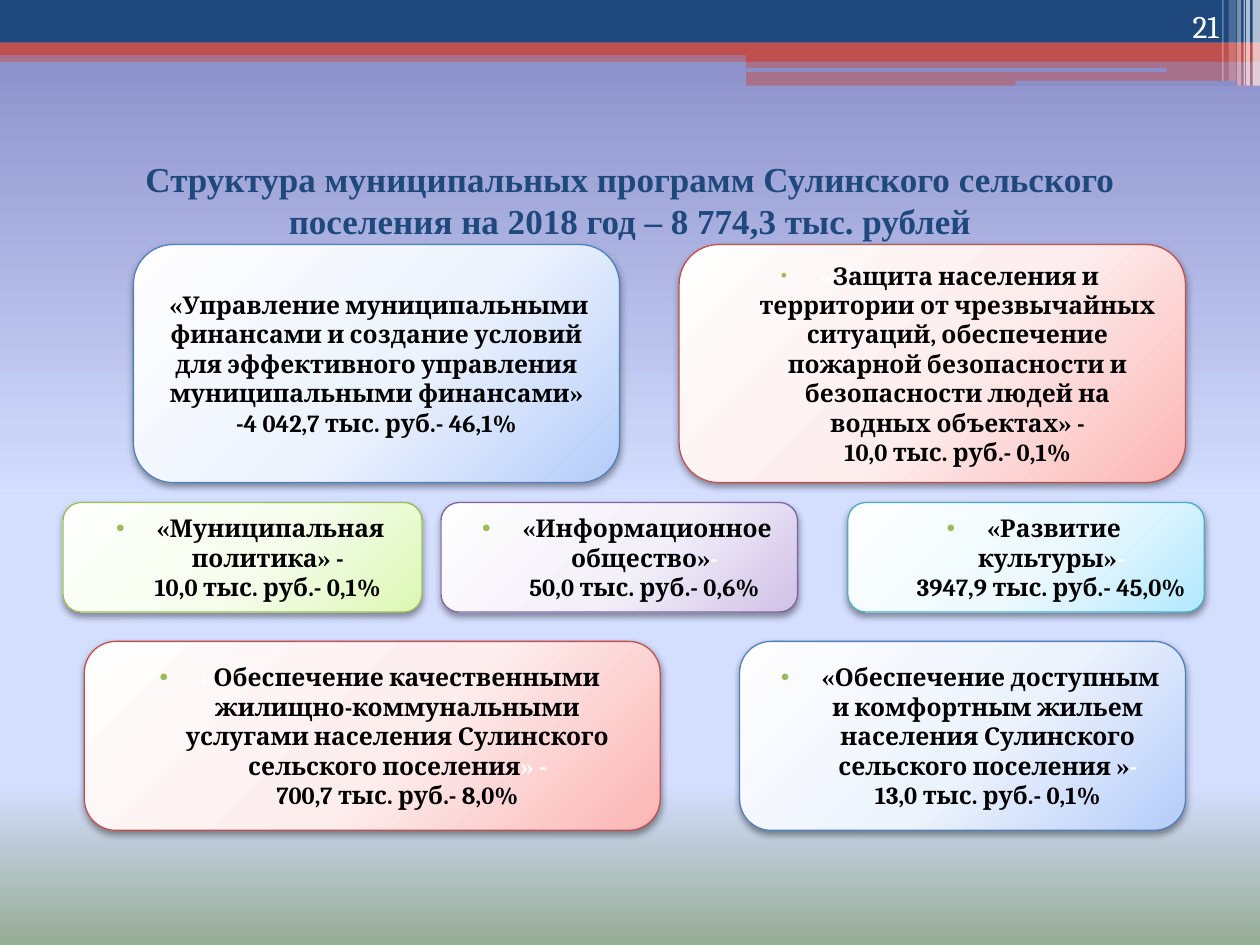
from pptx import Presentation
from pptx import oxml
from pptx.dml.color import RGBColor
from pptx.enum import shapes, text
from pptx.oxml import ns
from pptx.util import Cm, Pt

INK = {
    "navy": "1F497D", "red": "C0504D", "white": "FFFFFF", "black": "000000",
    "sky": "8B8FC8", "dot": "9BBB59",
}
SKY = [(0, "8488C4"), (53, "D4DEFF"), (83, "D4DEFF"), (100, "96AB94")]
# Line colour, then the three gradient colours
TONE = {
    "blue": ("4F81BD", "FEFEFF", "EDF3FD", "B5CCF9"),
    "red": ("C0504D", "FFFEFE", "FDEDED", "FBB5B4"),
    "green": ("9BBB59", "FEFFFE", "F6FDEC", "DCF7B4"),
    "violet": ("8064A2", "FEFEFE", "F3F0F9", "D0C1E7"),
    "aqua": ("4BACC6", "FEFFFF", "EDF9FE", "B2E8FF"),
}
LINEAR = '<a:lin ang="5400000" scaled="0"/>'
ROUND = ('<a:path path="circle"><a:fillToRect l="-40000" t="-90000" '
         'r="140000" b="190000"/></a:path>')


def node(xml):
    """Parse one DrawingML element, given without its namespace."""
    tag, rest = xml.split(" ", 1)
    return oxml.parse_xml(f'{tag} {ns.nsdecls("a")} {rest}')


def blend(owner, fill, stops, way):
    """Give the owner element a gradient in place of its plain fill."""
    fill.background()
    old = next(owner.iter(ns.qn("a:noFill")))
    marks = "".join(f'<a:gs pos="{pos * 1000}"><a:srgbClr val="{hue}"/></a:gs>'
                    for pos, hue in stops)
    new = node(f'<a:gradFill rotWithShape="1"><a:gsLst>{marks}</a:gsLst>{way}</a:gradFill>')
    old.getparent().replace(old, new)


deck = Presentation()
deck.slide_width, deck.slide_height = Cm(25.4), Cm(19.05)
slide = deck.slides.add_slide(deck.slide_layouts[4])
blend(slide.element, slide.background.fill, SKY, LINEAR)
title, body = slide.shapes.title, slide.placeholders[1]
for spare in list(slide.placeholders):
    if spare.placeholder_format.idx > 1:
        spare.element.getparent().remove(spare.element)

# Header bands and stripes: left, top, width, height, colour, opacity
RECT, SOFT = shapes.MSO_SHAPE.RECTANGLE, shapes.MSO_SHAPE.ROUNDED_RECTANGLE
bands = [
    (RECT, 0, 1.02, 25.4, 0.23, "red", 50),
    (RECT, 0, 0, 25.4, 0.86, "navy", 100),
    (RECT, 0, 0.86, 25.4, 0.25, "red", 100),
    (RECT, 15.04, 0.99, 10.36, 0.25, "red", 100),
    (RECT, 15.04, 1.22, 10.36, 0.51, "red", 50),
    (SOFT, 15.01, 1.37, 8.51, 0.08, "sky", 100),
    (SOFT, 20.47, 1.63, 4.45, 0.1, "sky", 100),
]
for left, wide, high, clear in [
    (25.25, 0.15, 1.73, 65), (25.12, 0.08, 1.73, 65), (25.07, 0.03, 1.73, 60),
    (24.94, 0.08, 1.73, 40), (24.77, 0.15, 1.63, 20), (24.64, 0.03, 1.63, 30),
]:
    bands.append((RECT, left, 0, wide, high, "white", clear))
for kind, left, top, wide, high, ink, clear in bands:
    band = slide.shapes.add_shape(kind, Cm(left), Cm(top), Cm(wide), Cm(high))
    band.shadow.inherit = False
    band.line.fill.background()
    band.fill.solid()
    band.fill.fore_color.rgb = RGBColor.from_string(INK[ink])
    if clear < 100:
        hue = next(band.element.spPr.iter(ns.qn("a:srgbClr")))
        hue.append(node(f'<a:alpha val="{clear * 1000}"/>'))

# Title
title.left, title.top, title.width, title.height = Cm(1.27), Cm(3.18), Cm(22.86), Cm(2.97)
frame = title.text_frame
frame.auto_size = text.MSO_AUTO_SIZE.NONE
frame.vertical_anchor = text.MSO_ANCHOR.TOP
frame.margin_top = 0
para = frame.paragraphs[0]
para.alignment = text.PP_ALIGN.CENTER
run = para.add_run()
run.text = "Структура муниципальных программ Сулинского сельского поселения на 2018 год – 8 774,3 тыс. рублей"
run.font.name, run.font.size, run.font.bold = "Times New Roman", Pt(20), True
run.font.color.rgb = RGBColor.from_string(INK["navy"])

# Page number
page = slide.shapes.add_textbox(Cm(22.71), 0, Cm(2.11), Cm(1.02))
page.text_frame.word_wrap = True
page.text_frame.vertical_anchor = text.MSO_ANCHOR.BOTTOM
para = page.text_frame.paragraphs[0]
para.alignment = text.PP_ALIGN.RIGHT
run = para.add_run()
run.text = "21"
run.font.name, run.font.size = "Cambria", Pt(18)
run.font.color.rgb = RGBColor.from_string(INK["white"])

# Programme cards: tone, left, top, width, height, runs (None is a line break)
B, W = "black", "white"
cards = [
    ("blue", 2.69, 4.93, 9.8, 4.8, [
        (" «Управление муниципальными финансами и создание условий для эффективного "
         "управления муниципальными финансами» -4 042,7 тыс. руб.- 46,1%", B, 14)]),
    ("green", 1.27, 10.13, 7.24, 2.21, [
        (" «Муниципальная политика» -", B, 14), None, ("10,0 тыс. руб.- 0,1%", B, 14)]),
    ("red", 13.69, 4.93, 10.21, 4.8, [
        (" ", W, 10), ("«", W, 14),
        ("Защита населения и территории от чрезвычайных ситуаций, обеспечение пожарной "
         "безопасности и безопасности людей на водных объектах» -", B, 14),
        None, ("10,0 тыс. руб.- 0,1%", B, 14)]),
    ("red", 1.7, 12.93, 11.61, 3.81, [
        (" «", W, 14),
        ("Обеспечение качественными жилищно-коммунальными услугами населения "
         "Сулинского сельского поселения", B, 14),
        ("» -", W, 14), None, ("700,7 тыс. руб.- 8,0%", B, 14)]),
    ("violet", 8.89, 10.13, 7.19, 2.21, [
        (" ", W, 14), ("«Информационное общество»", B, 14), ("-", W, 14),
        None, ("50,0 тыс. руб.- 0,6%", B, 14)]),
    ("aqua", 17.09, 10.13, 7.19, 2.21, [
        (" ", W, 14), ("«Развитие культуры»", B, 14), ("-", W, 14),
        None, ("3947,9 тыс. руб.- 45,0%", B, 14)]),
    ("blue", 14.91, 12.93, 8.99, 3.81, [
        (" ", W, 14),
        ("«Обеспечение доступным и комфортным жильем населения Сулинского сельского "
         "поселения »", B, 14),
        ("-", W, 14), None, ("13,0 тыс. руб.- 0,1%", B, 14)]),
]
for tone, left, top, wide, high, runs in cards:
    area = Cm(left), Cm(top), Cm(wide), Cm(high)
    if tone == "green":
        card = body
        card.left, card.top, card.width, card.height = area
        card.element.spPr.append(node('<a:prstGeom prst="roundRect"><a:avLst/></a:prstGeom>'))
    else:
        card = slide.shapes.add_shape(SOFT, *area)
    edge, *hues = TONE[tone]
    props = card.element.spPr
    blend(props, card.fill, zip((0, 55, 100), hues), ROUND)
    card.line.color.rgb = RGBColor.from_string(edge)
    card.line.width = Pt(0.75)
    card.shadow.inherit = False
    props.find(ns.qn("a:effectLst")).append(node(
        '<a:outerShdw blurRad="52070" dist="25400" dir="5400000" rotWithShape="0">'
        '<a:srgbClr val="000000"><a:alpha val="40000"/></a:srgbClr></a:outerShdw>'))

    frame = card.text_frame
    frame.word_wrap = True
    frame.auto_size = text.MSO_AUTO_SIZE.NONE
    frame.vertical_anchor = text.MSO_ANCHOR.MIDDLE
    para = frame.paragraphs[0]
    para.alignment = text.PP_ALIGN.CENTER
    if None in runs:
        para.space_before = Pt(3)
        form = para._p.get_or_add_pPr()
        form.set("marL", str(Cm(1.02)))
        form.set("indent", str(Cm(-0.71)))
        form.append(node(f'<a:buClr ><a:srgbClr val="{INK["dot"]}"/></a:buClr>'))
        form.append(node('<a:buFont typeface="Arial"/>'))
        form.append(node('<a:buChar char="•"/>'))
    for part in runs:
        if part is None:
            para.add_line_break()
            continue
        words, ink, size = part
        run = para.add_run()
        run.text = words
        run.font.name, run.font.size, run.font.bold = "Cambria", Pt(size), True
        run.font.color.rgb = RGBColor.from_string(INK[ink])

deck.save("out.pptx")
